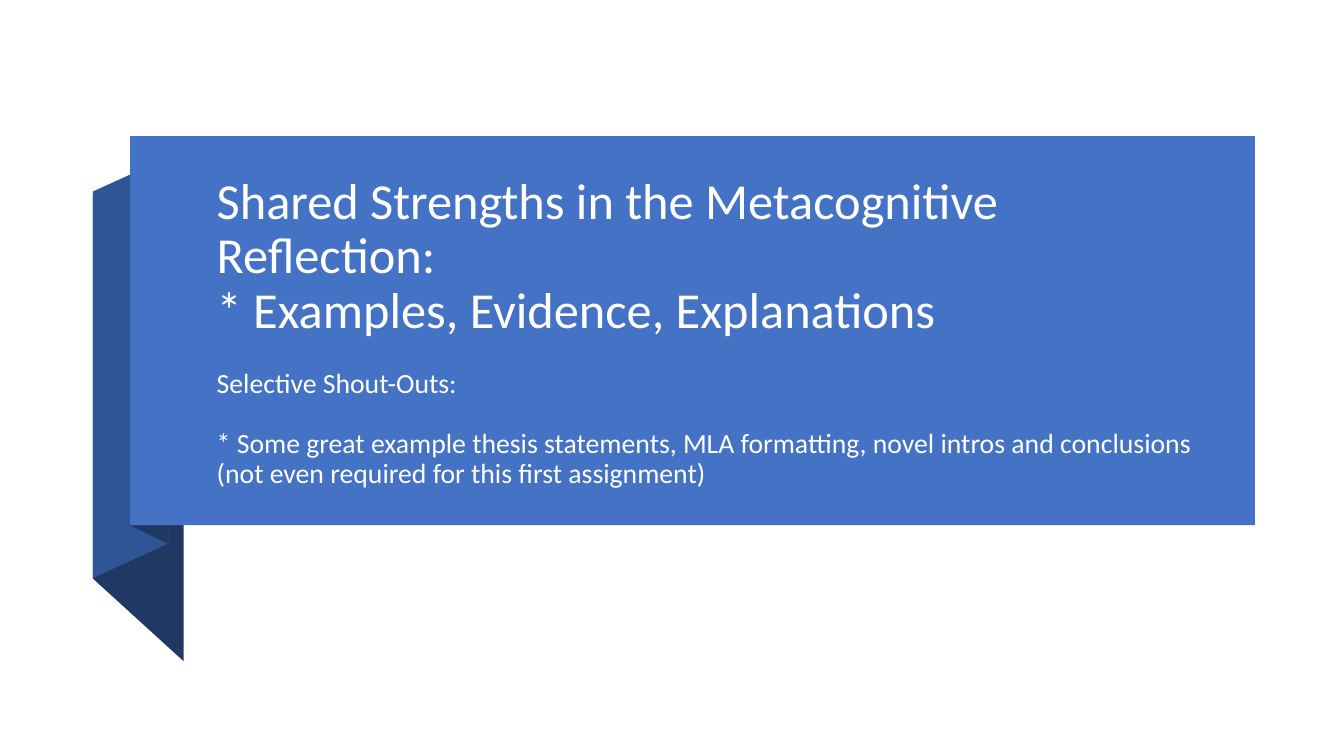
from pptx import Presentation
from pptx import util as u
from pptx.dml import color
from pptx.enum import shapes, text

NAVY, MID_BLUE, BLUE, WHITE = "203864", "2F5597", "4472C4", "FFFFFF"
HEADLINE = [
    ("Shared Strengths in the Metacognitive Reflection:", 36, 0),
    ("* Examples, Evidence, Explanations", 36, 0),
    ("Selective Shout-Outs:", 19.8, 21.75),
    ("* Some great example thesis statements, MLA formatting, novel intros "
     "and conclusions (not even required for this first assignment)", 19.8, 21.75),
]


def rgb(value):
    return color.RGBColor.from_string(value)


def paint(piece, fill):
    piece.fill.solid()
    piece.fill.fore_color.rgb = rgb(fill)
    piece.line.fill.background()
    piece.shadow.inherit = False


def add_ribbon(slide, left, top, width, height):
    outer, inner, tail_edge = -26.6, 27.4, 38.2
    folds = [
        (NAVY, [(outer, height + 38), (tail_edge, height + 97),
                (tail_edge, 101.5), (outer, 41.8)]),
        (MID_BLUE, [(outer, height + 37.7), (inner, height + 13),
                    (inner, 15.1), (outer, 39.6)]),
        (NAVY, [(0, height), (inner, height + 13.6), (inner, 14.4), (0, 0.7)]),
    ]
    for fill, corners in folds:
        points = [(u.Pt(left + x), u.Pt(top + y)) for x, y in corners]
        outline = slide.shapes.build_freeform(*points[0])
        outline.add_line_segments(points[1:], close=True)
        paint(outline.convert_to_shape(), fill)
    band = slide.shapes.add_shape(shapes.MSO_SHAPE.RECTANGLE, u.Pt(left),
                                  u.Pt(top), u.Pt(width), u.Pt(height))
    paint(band, BLUE)


def place_headline(slide, left, top, width, height):
    headline = slide.shapes.title
    headline.left, headline.top = u.Pt(left), u.Pt(top)
    headline.width, headline.height = u.Pt(width), u.Pt(height)
    slide.shapes._spTree.append(headline._element)
    frame = headline.text_frame
    frame.word_wrap = True
    frame.auto_size = text.MSO_AUTO_SIZE.NONE
    frame.vertical_anchor = text.MSO_ANCHOR.BOTTOM
    frame.margin_bottom = u.Pt(25.4)
    frame.text = "\n".join(words for words, _, _ in HEADLINE)
    for paragraph, (_, size, gap) in zip(frame.paragraphs, HEADLINE):
        paragraph.alignment = text.PP_ALIGN.LEFT
        paragraph.line_spacing = 0.9
        paragraph.space_before = u.Pt(gap)
        font = paragraph.runs[0].font
        font.name = "Calibri"
        font.size = u.Pt(size)
        font.color.rgb = rgb(WHITE)


def build_strengths_slide(deck):
    slide = deck.slides.add_slide(deck.slide_layouts[5])
    left, top, width, height = 92.9, 97.2, 803.5, 278
    add_ribbon(slide, left, top, width, height)
    place_headline(slide, left + 54.7, top + 29.5, 727.2, height - 29.5)


def main():
    deck = Presentation()
    deck.slide_width, deck.slide_height = u.Pt(960), u.Pt(540)
    build_strengths_slide(deck)
    deck.save("out.pptx")


if __name__ == "__main__":
    main()
